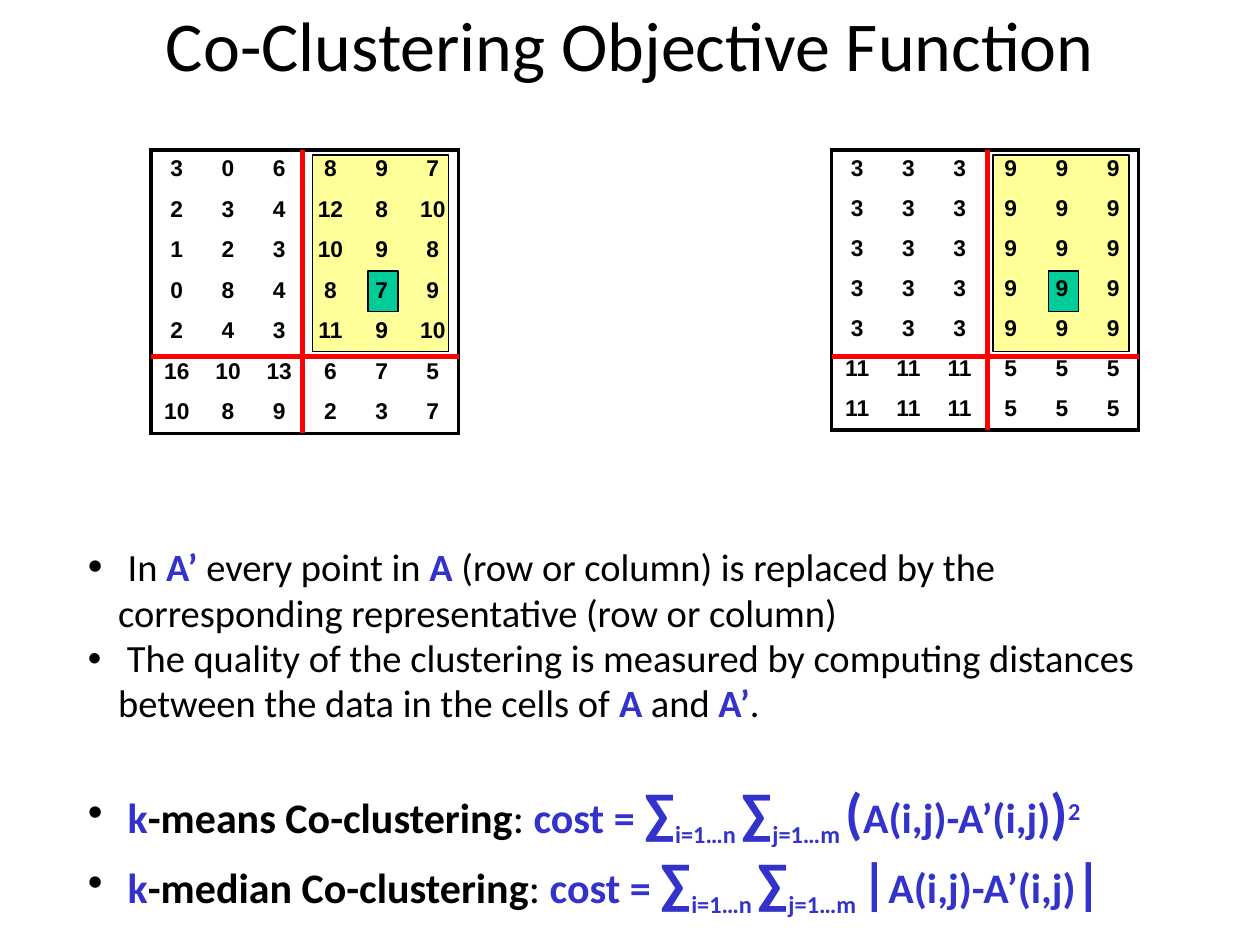
from lxml.etree import SubElement
from pptx import Presentation
from pptx.dml.color import RGBColor
from pptx.enum.shapes import MSO_CONNECTOR, MSO_SHAPE
from pptx.enum.text import PP_ALIGN
from pptx.oxml import parse_xml
from pptx.oxml.ns import nsdecls, qn
from pptx.util import Inches, Pt

COLORS = {"text": "000000", "accent": "3333CC", "divider": "FF0000",
          "cocluster": "FFFF99", "cell": "00CC99"}
NO_STYLE = "{2D5ABB26-0587-4C30-8999-92F81FD0307C}"

DATA = [[3, 0, 6, 8, 9, 7],
        [2, 3, 4, 12, 8, 10],
        [1, 2, 3, 10, 9, 8],
        [0, 8, 4, 8, 7, 9],
        [2, 4, 3, 11, 9, 10],
        [16, 10, 13, 6, 7, 5],
        [10, 8, 9, 2, 3, 7]]
REPRESENTATIVES = [[3] * 3 + [9] * 3] * 5 + [[11] * 3 + [5] * 3] * 2


def color(name):
    return RGBColor.from_string(COLORS[name])


def add_title(slide, left, top, width, height):
    frame = slide.shapes.add_textbox(left, top, width, height).text_frame
    frame.word_wrap = True
    title = frame.paragraphs[0]
    title.text = "Co-Clustering Objective Function"
    title.alignment = PP_ALIGN.CENTER
    title.line_spacing = 0.98
    title.font.size, title.font.name = Pt(40), "Calibri"
    title.font.color.rgb = color("text")


def add_highlight(slide, fill, left, top, width, height):
    highlight = slide.shapes.add_shape(MSO_SHAPE.RECTANGLE, left, top, width, height)
    highlight.shadow.inherit = False
    highlight.fill.solid()
    highlight.fill.fore_color.rgb = color(fill)
    highlight.line.color.rgb = color("text")
    highlight.line.width = Pt(0.75)


def add_divider(slide, x1, y1, x2, y2):
    divider = slide.shapes.add_connector(MSO_CONNECTOR.STRAIGHT, x1, y1, x2, y2)
    divider.line.color.rgb = color("divider")
    divider.line.width = Pt(3)
    SubElement(divider._element.spPr, qn("a:effectLst"))


def set_borders(cell, sides):
    """Draw an outer border on the given sides, in schema order L, R, T, B."""
    properties = cell._tc.get_or_add_tcPr()
    for position, side in enumerate(sides):
        properties.insert(position, parse_xml(
            f'<a:ln{side} {nsdecls("a")} w="{Pt(2.25)}"><a:solidFill>'
            f'<a:srgbClr val="{COLORS["text"]}"/></a:solidFill></a:ln{side}>'))


def add_matrix(slide, values, left, top, width, height, split):
    """Place a matrix; split is the offset of its vertical divider."""
    # Highlighted co-cluster and one cell in it, behind the numbers
    add_highlight(slide, "cocluster", left + Inches(1.28), top + Inches(0.04),
                  Inches(1.08), Inches(1.56))
    add_highlight(slide, "cell", left + Inches(1.72), top + Inches(0.96),
                  Inches(0.24), Inches(0.32))

    # Numbers
    rows, columns = len(values), len(values[0])
    matrix = slide.shapes.add_table(rows, columns, left, top, width, height).table
    matrix.first_row = matrix.horz_banding = False
    matrix._tbl.tblPr.find(qn("a:tableStyleId")).text = NO_STYLE
    for r, row in enumerate(values):
        matrix.rows[r].height = height // rows
        for c, value in enumerate(row):
            cell = matrix.cell(r, c)
            cell.margin_left = cell.margin_right = Inches(0.05)
            cell.fill.background()
            edges = {"L": c == 0, "R": c == columns - 1,
                     "T": r == 0, "B": r == rows - 1}
            set_borders(cell, [side for side, outer in edges.items() if outer])
            number = cell.text_frame.paragraphs[0]
            number.text = str(value)
            number.alignment = PP_ALIGN.CENTER
            number.font.size, number.font.name = Pt(13), "Arial"
            number.font.bold = True
            number.font.color.rgb = color("text")

    # Cluster dividers
    row_split = top + Inches(1.64)
    add_divider(slide, left, row_split, left + width, row_split)
    add_divider(slide, left + split, top, left + split, top + height)


def cost_formula(prefix, method, opening, closing):
    """Runs as (text, size, colour, bold, baseline)."""
    runs = [(prefix, 24, "accent", True, 0),
            (method, 24, "text", True, 0),
            (": ", 24, "text", False, 0),
            ("cost = ", 24, "accent", True, 0)]
    for bounds in ("i=1…n ", "j=1…m "):
        runs += [("∑", 32, "accent", True, 0), (bounds, 24, "accent", True, -25)]
    return runs + [(opening, 32, "accent", True, 0),
                   ("A(i,j)-A’(i,j)", 24, "accent", True, 0),
                   (closing, 32, "accent", True, 0)]


def plain(text, size=22):
    return (text, size, "text", False, 0)


def symbol(text):
    return (text, 22, "accent", True, 0)


def add_bullets(slide, left, top, width, height):
    bullets = [
        [plain(" ", 24), plain("In "), symbol("A’ "), plain("every point in "),
         symbol("A "), plain("(row or column) is replaced by the corresponding "
                             "representative (row or column)")],
        [plain(" The quality of the clustering is measured by computing distances "
               "between the data in the cells of "),
         symbol("A"), plain(" and "), symbol("A’"), plain(".")],
        cost_formula(" k", "-means Co-clustering", "(", ")")
        + [("2", 24, "accent", True, 30)],
        cost_formula(" k", "-median Co-clustering", "|", "|"),
    ]
    frame = slide.shapes.add_textbox(left, top, width, height).text_frame
    frame.word_wrap = True
    for index, runs in enumerate(bullets):
        bullet = frame.paragraphs[0] if index == 0 else frame.add_paragraph()
        bullet.line_spacing = 0.98
        bullet.font.name = "Calibri"
        if index == 2:  # gap between the explanation and the formulas
            bullet.space_before = Pt(29)
        properties = bullet._p.get_or_add_pPr()
        properties.set("marL", str(Inches(0.24)))
        properties.set("indent", str(-Inches(0.24)))
        marks = [f'<a:buClr {nsdecls("a")}><a:srgbClr val="{COLORS["text"]}"/></a:buClr>',
                 f'<a:buFont {nsdecls("a")} typeface="Arial"/>',
                 f'<a:buChar {nsdecls("a")} char="•"/>']
        defaults = properties.find(qn("a:defRPr"))
        for mark in marks:
            defaults.addprevious(parse_xml(mark))
        for text, size, tint, bold, baseline in runs:
            run = bullet.add_run()
            run.text = text
            run.font.size, run.font.bold = Pt(size), bold
            run.font.name = "Calibri"
            run.font.color.rgb = color(tint)
            if baseline:
                run.font._element.set("baseline", str(baseline * 1000))


def main():
    deck = Presentation()
    deck.slide_width, deck.slide_height = Inches(10), Inches(7.5)
    slide = deck.slides.add_slide(deck.slide_layouts[6])
    add_title(slide, Inches(0.5), Inches(0), Inches(9), Inches(0.93))
    add_matrix(slide, DATA, Inches(1.2), Inches(1.19),
               Inches(2.44), Inches(2.25), Inches(1.2))
    add_matrix(slide, REPRESENTATIVES, Inches(6.6), Inches(1.19),
               Inches(2.44), Inches(2.22), Inches(1.24))
    add_bullets(slide, Inches(0.6), Inches(4.25), Inches(8.64), Inches(3.04))
    deck.save("out.pptx")


if __name__ == "__main__":
    main()
